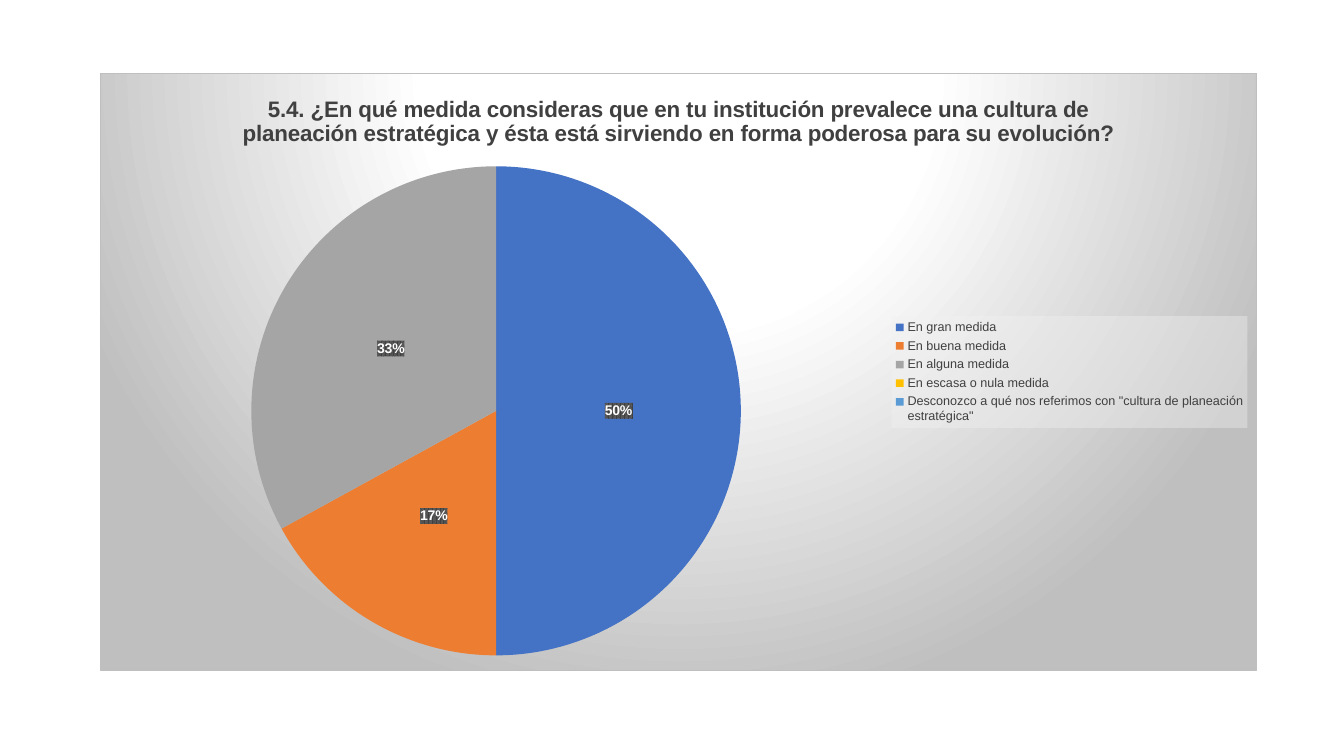
from pptx import Presentation
from pptx.chart.data import CategoryChartData
from pptx.dml.color import RGBColor
from pptx.enum.chart import XL_CHART_TYPE, XL_LABEL_POSITION, XL_LEGEND_POSITION
from pptx.oxml import parse_xml
from pptx.oxml.ns import qn
from pptx.util import Emu, Pt

# Content
TITLE = ("5.4. ¿En qué medida consideras que en tu institución prevalece una cultura de "
         "planeación estratégica y ésta está sirviendo en forma poderosa para su evolución?")
ANSWERS = [
    ("En gran medida", 50, "4472C4"),
    ("En buena medida", 17, "ED7D31"),
    ("En alguna medida", 33, "A5A5A5"),
    ("En escasa o nula medida", 0, "FFC000"),
    ('Desconozco a qué nos referimos con "cultura de planeación estratégica"', 0, "5B9BD5"),
]

# Places in px: left, top, width, height
PX = 9071
FRAME = (100, 73, 1157, 598)
PIE = (251, 166, 490, 490)
KEY = (892, 316, 356, 112)

NS = ('xmlns:c="http://schemas.openxmlformats.org/drawingml/2006/chart" '
      'xmlns:a="http://schemas.openxmlformats.org/drawingml/2006/main"')


def tint(code):
    return RGBColor.from_string(code)


def style(font, size, code, bold=False):
    font.name, font.size, font.bold = "Arial", Pt(size), bold
    font.color.rgb = tint(code)


def look(inner):
    return parse_xml(f"<c:spPr {NS}>{inner}</c:spPr>")


def solid(code):
    return f'<a:srgbClr val="{code}"/>'


def place(box, inner=""):
    """Layout of a chart part as shares of the chart frame."""
    left, top, wide, high = FRAME
    share = {"x": (box[0] - left) / wide, "y": (box[1] - top) / high,
             "w": box[2] / wide, "h": box[3] / high}
    modes = '<c:xMode val="edge"/><c:yMode val="edge"/>'
    sizes = "".join(f'<c:{k} val="{v:.4f}"/>' for k, v in share.items())
    return parse_xml(f"<c:layout {NS}><c:manualLayout>{inner}{modes}{sizes}"
                     "</c:manualLayout></c:layout>")


def clear(part):
    for old in part.findall(qn("c:layout")):
        part.remove(old)


deck = Presentation()
deck.slide_width, deck.slide_height = Emu(12192000), Emu(6858000)
slide = deck.slides.add_slide(deck.slide_layouts[6])

# Pie chart
data = CategoryChartData()
data.categories = [name for name, _, _ in ANSWERS]
data.add_series("Series 1", [value for _, value, _ in ANSWERS])
chart = slide.shapes.add_chart(XL_CHART_TYPE.PIE, *(Emu(n * PX) for n in FRAME), data).chart
style(chart.font, 10, "000000")
series = chart.plots[0].series[0]
for i, (_, _, code) in enumerate(ANSWERS):
    fill = series.points[i].format.fill
    fill.solid()
    fill.fore_color.rgb = tint(code)
area = chart._chartSpace.chart.plotArea
clear(area)
area.insert(0, place(PIE, '<c:layoutTarget val="inner"/>'))

# Frame with a round gradient
stops = "".join(f'<a:gs pos="{at}000">{solid(code)}</a:gs>'
                for at, code in [(0, "FFFFFF"), (39, "FFFFFF"), (100, "BFBFBF")])
chart._chartSpace.chart.addnext(look(
    f'<a:gradFill><a:gsLst>{stops}</a:gsLst><a:path path="circle">'
    '<a:fillToRect l="50000" t="-80000" r="50000" b="180000"/></a:path></a:gradFill>'
    f'<a:ln w="9525"><a:solidFill>{solid("BFBFBF")}</a:solidFill></a:ln>'))

# Title
chart.has_title = True
chart.chart_title.include_in_layout = False
text = chart.chart_title.text_frame
text.text = TITLE
style(text.paragraphs[0].font, 16, "404040", True)

# Percent labels, none on empty slices
labels = series.data_labels
labels.show_percentage, labels.show_value = True, False
labels.show_legend_key = False
labels.number_format, labels.number_format_is_linked = "0%", False
labels.position = XL_LABEL_POSITION.CENTER
style(labels.font, 10, "FFFFFF", True)
root = labels._element
root.find(qn("c:txPr")).addprevious(look(
    f'<a:pattFill prst="pct75"><a:fgClr>{solid("404040")}</a:fgClr>'
    f'<a:bgClr>{solid("595959")}</a:bgClr></a:pattFill>'))
empty = [i for i, (_, value, _) in enumerate(ANSWERS) if not value]
for spot, i in enumerate(empty):
    root.insert(spot, parse_xml(
        f'<c:dLbl {NS}><c:idx val="{i}"/><c:delete val="1"/></c:dLbl>'))

# Legend
chart.has_legend = True
legend = chart.legend
legend.position = XL_LEGEND_POSITION.RIGHT
legend.include_in_layout = False
style(legend.font, 9, "404040")
key = legend._element
clear(key)
key.find(qn("c:legendPos")).addnext(place(KEY))
key.find(qn("c:txPr")).addprevious(look(
    '<a:solidFill><a:srgbClr val="F2F2F2"><a:alpha val="39000"/></a:srgbClr></a:solidFill>'))

deck.save("out.pptx")
